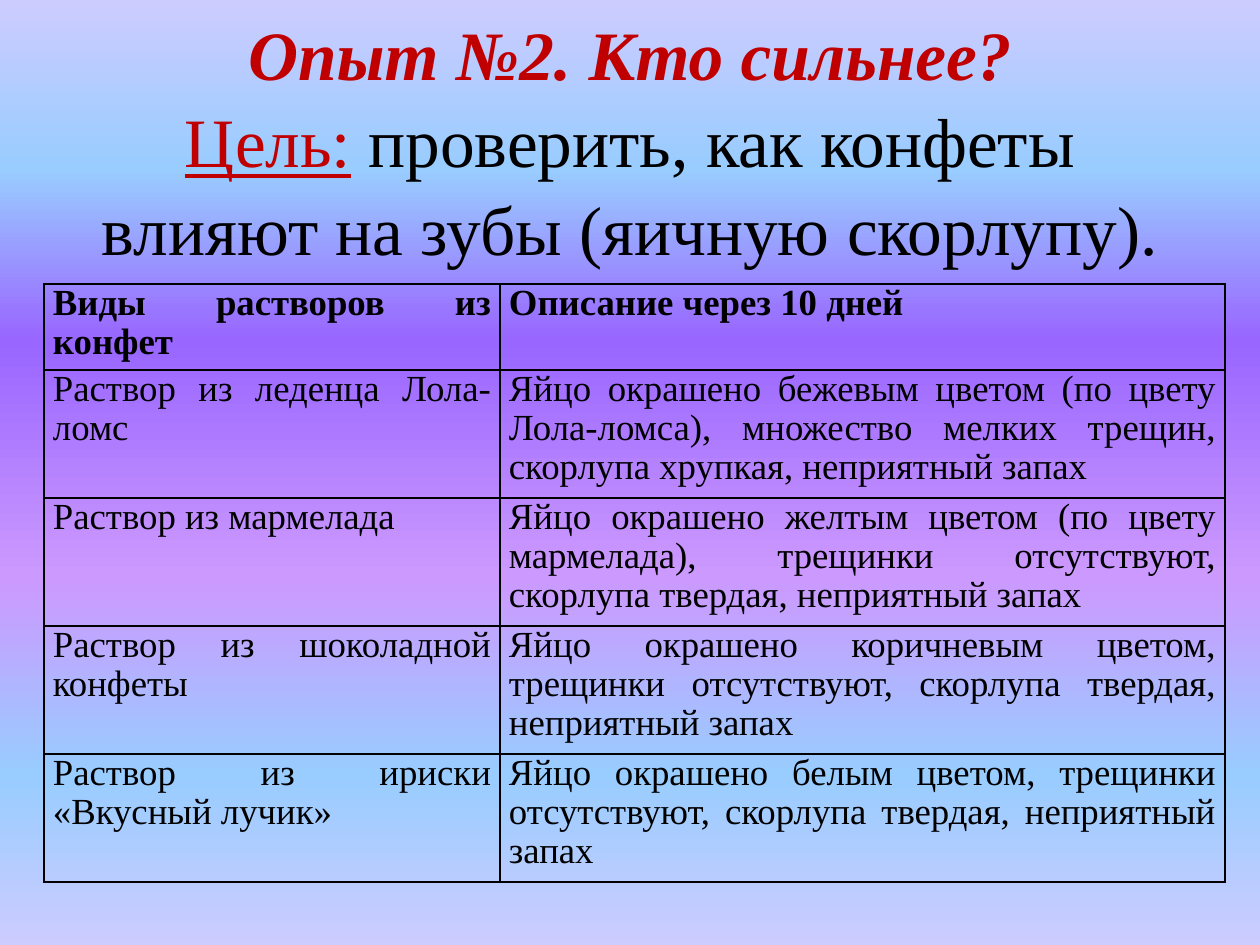
from lxml import etree
from pptx import Presentation, util as u
from pptx.dml.color import RGBColor
from pptx.enum import text
from pptx.oxml.ns import qn

PX = 914400 / 126
FONT = "Times New Roman"
COLORS = {"ink": "000000", "accent": "C00000", "lilac": "CCCCFF", "sky": "99CCFF",
          "violet": "9966FF", "orchid": "CC99FF"}
SKY_STOPS = [(0, "lilac"), (18, "sky"), (36, "violet"), (61, "orchid"), (82, "sky"), (100, "lilac")]
HEADING = [
    ("Опыт №2. Кто сильнее?\v", "accent", {"bold": True, "italic": True}),
    ("Цель:", "accent", {"bold": False, "underline": True}),
    (" проверить, как конфеты влияют на зубы (яичную скорлупу).", "ink", {"bold": False}),
]
RESULTS = [
    ("Виды растворов из конфет", "Описание через 10 дней"),
    ("Раствор из леденца Лола-ломс",
     "Яйцо окрашено бежевым цветом (по цвету Лола-ломса), множество мелких трещин, "
     "скорлупа хрупкая, неприятный запах"),
    ("Раствор из мармелада",
     "Яйцо окрашено желтым цветом (по цвету мармелада), трещинки отсутствуют, "
     "скорлупа твердая, неприятный запах"),
    ("Раствор из шоколадной конфеты",
     "Яйцо окрашено коричневым цветом, трещинки отсутствуют, скорлупа твердая, неприятный запах"),
    ("Раствор из ириски «Вкусный лучик»",
     "Яйцо окрашено белым цветом, трещинки отсутствуют, скорлупа твердая, неприятный запах"),
]


def px(length):
    return u.Emu(round(length * PX))


def apply(target, values):
    for name, value in values.items():
        setattr(target, name, value)


def add_run(paragraph, words, size, color, style):
    run = paragraph.add_run()
    run.text = words
    apply(run.font, {"name": FONT, "size": u.Pt(size), **style})
    run.font.color.rgb = RGBColor.from_string(COLORS[color])


def paint_background(slide):
    fill = slide.background.fill
    fill.gradient()
    fill.gradient_angle = 270
    stops = slide.element.find(".//" + qn("a:gsLst"))
    for stop in list(stops):
        stops.remove(stop)
    for position, color in SKY_STOPS:
        stop = etree.SubElement(stops, qn("a:gs"), pos=str(position * 1000))
        etree.SubElement(stop, qn("a:srgbClr"), val=COLORS[color])


def place_heading(slide, left, top, width, height):
    heading = slide.shapes.title
    apply(heading, {"left": px(left), "top": px(top), "width": px(width), "height": px(height)})
    frame = heading.text_frame
    apply(frame, {"auto_size": text.MSO_AUTO_SIZE.NONE, "word_wrap": True,
                  "vertical_anchor": text.MSO_ANCHOR.MIDDLE, "margin_bottom": px(79)})
    paragraph = frame.paragraphs[0]
    apply(paragraph, {"alignment": text.PP_ALIGN.CENTER, "line_spacing": 1.05})
    for words, color, style in HEADING:
        if words.endswith("\v"):
            add_run(paragraph, words[:-1], 39.6, color, style)
            paragraph.add_line_break()
        else:
            add_run(paragraph, words, 39.6, color, style)


def border_cell(cell):
    properties = cell._tc.get_or_add_tcPr()
    for order, side in enumerate(("lnL", "lnR", "lnT", "lnB")):
        line = etree.Element(qn("a:" + side), w=str(u.Pt(1)))
        solid = etree.SubElement(line, qn("a:solidFill"))
        etree.SubElement(solid, qn("a:srgbClr"), val=COLORS["ink"])
        properties.insert(order, line)


def place_results(slide, left, top, columns, header_height, row_height):
    heights = [header_height] + [row_height] * (len(RESULTS) - 1)
    results = slide.shapes.add_table(len(RESULTS), len(columns), px(left), px(top),
                                     px(sum(columns)), px(sum(heights))).table
    apply(results, {"first_row": False, "horz_banding": False})
    for column, width in zip(results.columns, columns):
        column.width = px(width)
    for index, (row, height, entries) in enumerate(zip(results.rows, heights, RESULTS)):
        row.height = px(height)
        for cell, words in zip(row.cells, entries):
            cell.fill.background()
            border_cell(cell)
            apply(cell, {"margin_left": px(9), "margin_right": px(9),
                         "margin_top": 0, "margin_bottom": 0})
            paragraph = cell.text_frame.paragraphs[0]
            apply(paragraph, {"alignment": text.PP_ALIGN.JUSTIFY, "line_spacing": 0.96})
            add_run(paragraph, words, 21, "ink", {"bold": index == 0})


def main():
    deck = Presentation()
    apply(deck, {"slide_width": px(1260), "slide_height": px(945)})
    slide = deck.slides.add_slide(deck.slide_layouts[5])
    paint_background(slide)
    place_heading(slide, 63, 76, 1134, 197)
    place_results(slide, 44, 284, (456, 725), 86, 128)
    deck.save("out.pptx")


if __name__ == "__main__":
    main()
